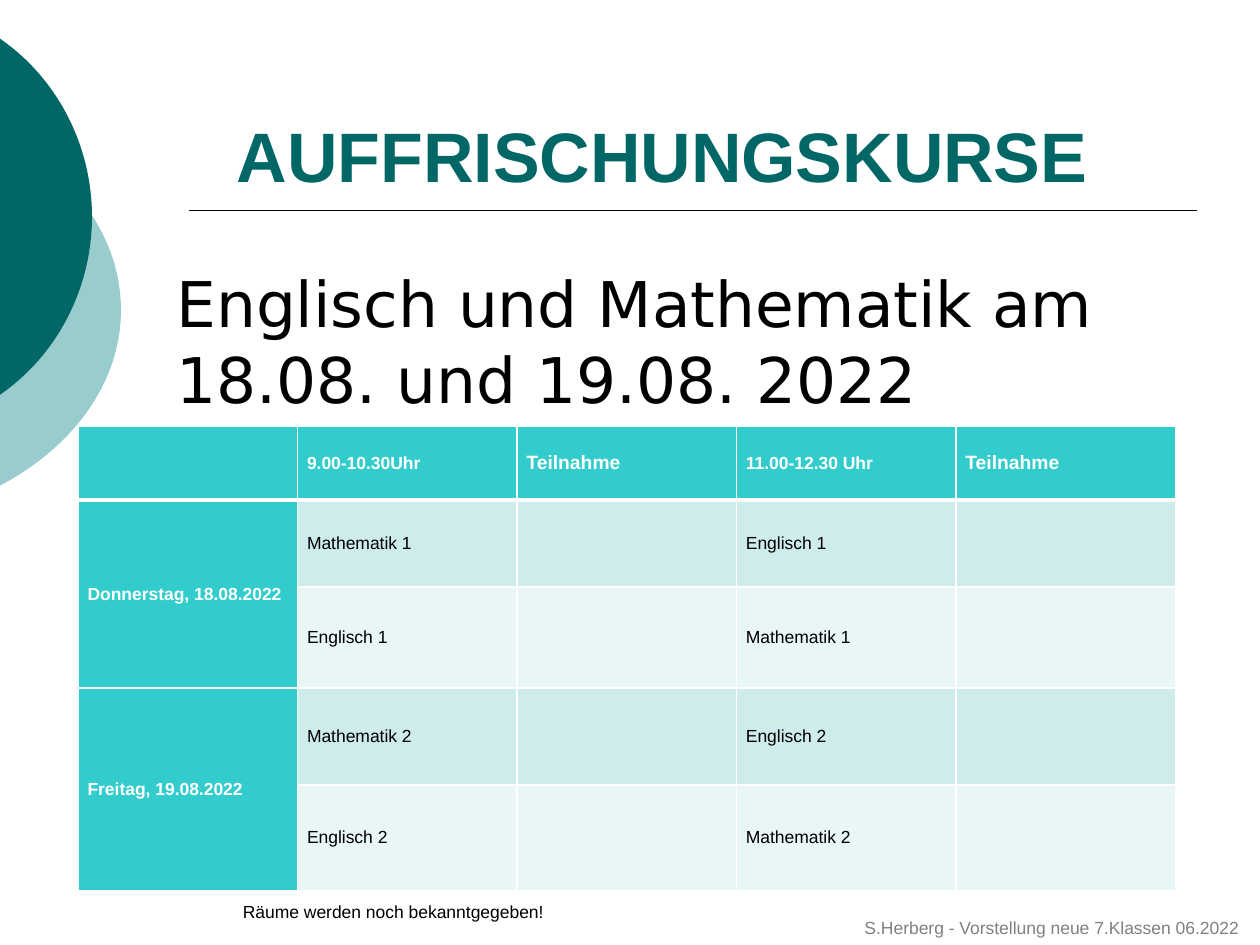
import pptx
import pptx.dml.color
import pptx.enum.shapes
import pptx.enum.text
import pptx.oxml
import pptx.oxml.ns
import pptx.util

Inches = pptx.util.Inches
Pt = pptx.util.Pt
ALIGN = pptx.enum.text.PP_ALIGN
ANCHOR = pptx.enum.text.MSO_ANCHOR
NAMESPACE = pptx.oxml.ns.nsdecls("a")

COLOURS = {
    "dark": "006666",
    "pale": "99CCCC",
    "header": "33CCCC",
    "band": "CEECEC",
    "light_band": "E8F6F6",
    "grey": "808080",
    "black": "000000",
    "white": "FFFFFF",
}

HEADINGS = ["", "9.00-10.30Uhr", "Teilnahme", "11.00-12.30 Uhr", "Teilnahme"]
DAYS = ["Donnerstag, 18.08.2022", "Freitag, 19.08.2022"]
ROW_HEIGHTS = [0.59, 0.69, 0.8, 0.77, 0.84]
TABLE_WIDTH = 8.71


def colour(name):
    return pptx.dml.color.RGBColor.from_string(COLOURS[name])


def fill_shape(target, name):
    target.fill.solid()
    target.fill.fore_color.rgb = colour(name)


def place(shape, left, top, width, height):
    shape.left, shape.top = Inches(left), Inches(top)
    shape.width, shape.height = Inches(width), Inches(height)


def write_text(frame, text, size=10, font="Arial", ink="black", bold=False,
               align=ALIGN.LEFT):
    para = frame.paragraphs[0]
    para.alignment = align
    span = para.add_run()
    span.text = text
    span.font.size = Pt(size)
    span.font.name = font
    span.font.bold = bold
    span.font.color.rgb = colour(ink)
    return para


def fill_placeholder(box, text, area, anchor, **text_format):
    place(box, *area)
    frame = box.text_frame
    frame.word_wrap = True
    frame.auto_size = pptx.enum.text.MSO_AUTO_SIZE.NONE
    frame.vertical_anchor = anchor
    return write_text(frame, text, **text_format)


def remove_bullet(para):
    properties = para._p.get_or_add_pPr()
    properties.set("marL", "0")
    properties.set("indent", "0")
    properties.append(pptx.oxml.parse_xml(f"<a:buNone {NAMESPACE}/>"))


def add_caption(page, text, area, **text_format):
    box = page.shapes.add_textbox(*(Inches(value) for value in area))
    box.text_frame.word_wrap = True
    write_text(box.text_frame, text, align=ALIGN.CENTER, **text_format)


def add_edge_arc(page, area, reach, handle, middle, half, name):
    """Draw a round bulge from the left edge, mirrored about its middle."""
    left, top, width, height = area
    upper = [(-0.01, -half), (handle, 0.32 - half), (reach, -0.56), (reach, 0)]
    lower = [(x, -y) for x, y in reversed(upper[:-1])]
    points = [(Inches(x - left), Inches(middle + y - top)) for x, y in upper + lower]

    builder = page.shapes.build_freeform(*points[0])
    builder.add_line_segments([points[3], points[6]], close=True)
    shape = builder.convert_to_shape()
    place(shape, *area)

    # Curved outline in place of the straight segments
    marks = [f'<a:pt x="{x}" y="{y}"/>' for x, y in points]
    outline = shape._element.spPr.find(
        f'{pptx.oxml.ns.qn("a:custGeom")}/{pptx.oxml.ns.qn("a:pathLst")}')
    outline.getparent().replace(outline, pptx.oxml.parse_xml(
        f'<a:pathLst {NAMESPACE}><a:path w="{Inches(width)}" h="{Inches(height)}">'
        f'<a:moveTo>{marks[0]}</a:moveTo>'
        f'<a:cubicBezTo>{"".join(marks[1:4])}</a:cubicBezTo>'
        f'<a:cubicBezTo>{"".join(marks[4:])}</a:cubicBezTo>'
        f'<a:close/></a:path></a:pathLst>'))
    shape.shadow.inherit = False
    fill_shape(shape, name)
    shape.line.fill.background()


def add_rule(page, left, right, top):
    rule = page.shapes.add_connector(
        pptx.enum.shapes.MSO_CONNECTOR.STRAIGHT,
        Inches(left), Inches(top), Inches(right), Inches(top))
    rule.line.color.rgb = colour("black")
    rule.line.width = Pt(1)
    rule._element.spPr.append(pptx.oxml.parse_xml(f"<a:effectLst {NAMESPACE}/>"))


def set_borders(cell, **widths):
    properties = cell._tc.get_or_add_tcPr()
    for side in "LRTB":
        properties.append(pptx.oxml.parse_xml(
            f'<a:ln{side} {NAMESPACE} w="{Pt(widths.get(side, 1))}">'
            f'<a:solidFill><a:srgbClr val="{COLOURS["white"]}"/></a:solidFill>'
            f'</a:ln{side}>'))


def format_cell(cell, text, background, borders, **text_format):
    set_borders(cell, **borders)
    fill_shape(cell, background)
    cell.vertical_anchor = ANCHOR.MIDDLE
    cell.margin_left = cell.margin_right = Pt(5.4)
    cell.margin_top = cell.margin_bottom = 0
    if text:
        write_text(cell.text_frame, text, **text_format)


def add_timetable(page, left, top):
    rows, columns = len(ROW_HEIGHTS), len(HEADINGS)
    table = page.shapes.add_table(
        rows, columns, Inches(left), Inches(top),
        Inches(TABLE_WIDTH), Inches(sum(ROW_HEIGHTS))).table
    for column in table.columns:
        column.width = Inches(TABLE_WIDTH / columns)
    for row, height in zip(table.rows, ROW_HEIGHTS):
        row.height = Inches(height)

    # Header row
    for index, heading in enumerate(HEADINGS):
        format_cell(table.cell(0, index), heading, "header", {"B": 3},
                    size=11 if heading == "Teilnahme" else 10,
                    ink="white", bold=True)

    # Two rows a day, with the subjects swapped in the second
    for day, date in enumerate(DAYS):
        subjects = [f"Mathematik {day + 1}", f"Englisch {day + 1}"]
        for half, band in enumerate(["band", "light_band"]):
            row = 1 + 2 * day + half
            borders = {"T": 3} if row == 1 else {}
            format_cell(table.cell(row, 0), "" if half else date, "header",
                        borders, ink="white", bold=True)
            texts = [subjects[half], "", subjects[1 - half], ""]
            for index, text in enumerate(texts, start=1):
                format_cell(table.cell(row, index), text, band, borders)
        table.cell(1 + 2 * day, 0).merge(table.cell(2 + 2 * day, 0))


def main():
    deck = pptx.Presentation()
    deck.slide_width, deck.slide_height = Inches(10), Inches(7.5)
    page = deck.slides.add_slide(deck.slide_layouts[1])

    # Decoration
    add_edge_arc(page, (-3.54, 0.75, 4.5, 3.42), 0.96, 0.6, 2.46, 1.4, "pale")
    add_edge_arc(page, (-2.65, 0, 3.38, 3.45), 0.73, 0.46, 1.72, 1.42, "dark")
    add_rule(page, 1.5, 9.5, 1.67)

    # Title and dates
    fill_placeholder(page.shapes.title, "AUFFRISCHUNGSKURSE",
                     (1.78, 0.84, 8.5, 1.1), ANCHOR.TOP,
                     size=40, ink="dark", bold=True)
    dates = fill_placeholder(
        page.placeholders[1], "Englisch und Mathematik am 18.08. und 19.08. 2022",
        (1.3, 1.71, 8.5, 1.64), ANCHOR.BOTTOM, size=36, font="DejaVu Sans")
    remove_bullet(dates)

    # Timetable and captions
    add_timetable(page, 0.62, 3.38)
    add_caption(page, "S.Herberg - Vorstellung neue 7.Klassen 06.2022",
                (6.02, 7.23, 4.65, 0.27), ink="grey")
    add_caption(page, "Räume werden noch bekanntgegeben!", (1.62, 7.1, 3, 0.27))

    deck.save("out.pptx")


if __name__ == "__main__":
    main()
